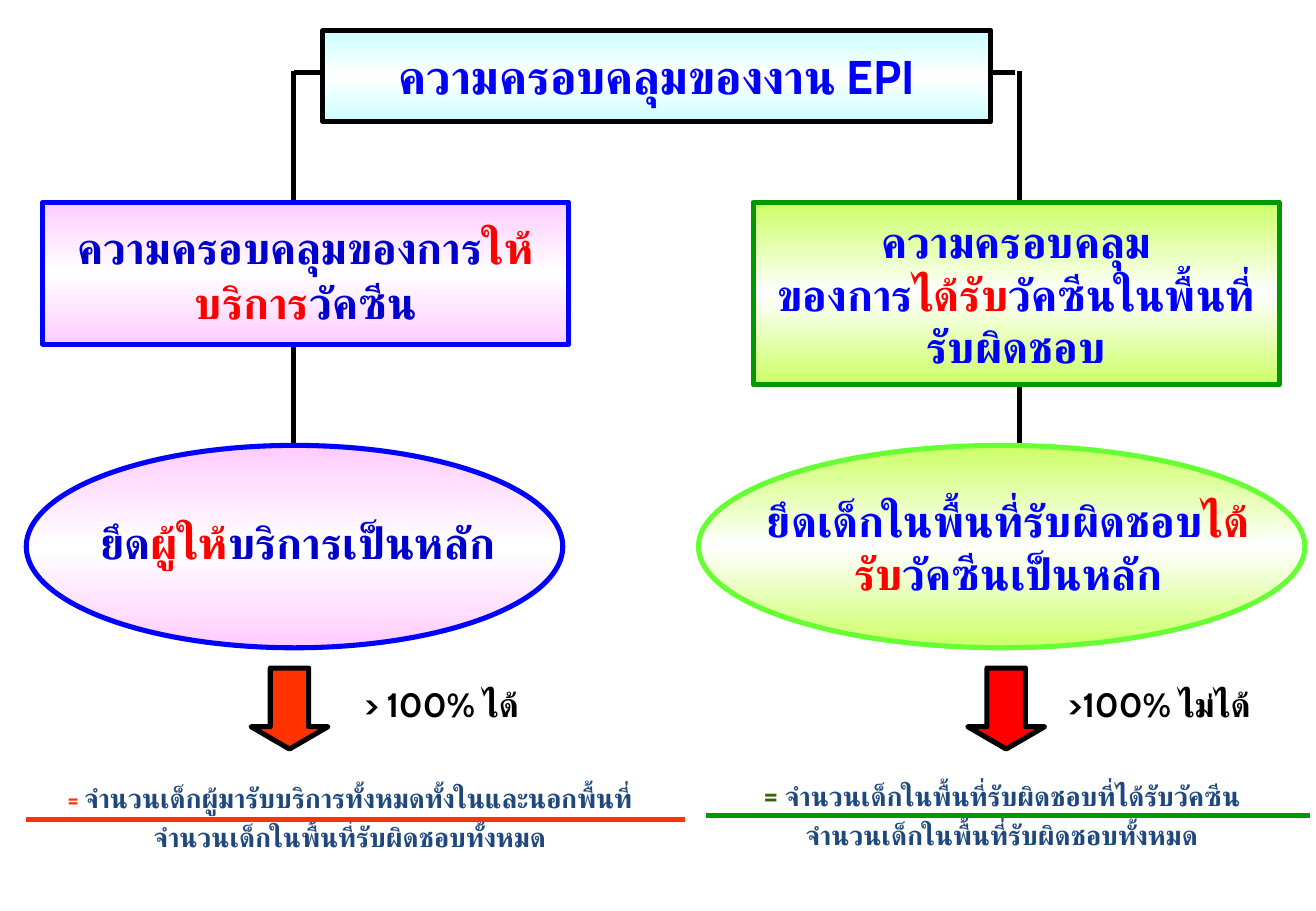
import copy

import pptx
import pptx.dml.color
import pptx.enum.shapes
import pptx.enum.text
import pptx.oxml
import pptx.oxml.ns
import pptx.util

COLS, ROWS = 130, 90
UNIT = 1 / 12  # one grid cell, in inches
SHAPE = pptx.enum.shapes.MSO_SHAPE
C = {
    "black": "000000", "white": "FFFFFF", "red": "FF0000", "blue": "0000FF",
    "navy": "0000CC", "slate": "1F497D", "orange": "FF3300", "olive": "336600",
    "green": "009900", "bright": "66FF33", "lime": "CCFF66", "pink": "FFCCFF",
    "aqua": "CCFFFF",
}


def rgb(name):
    return pptx.dml.color.RGBColor.from_string(C[name])


def cells(n):
    return pptx.util.Inches(n * UNIT)


def place(box, x, y, w, h):
    """Grid position of a part inside a box."""
    return [cells(n) for n in (box[0] + x, box[1] + y, w, h)]


def add_text(sp, paragraphs, size=26, font="Cabin", spacing=1.0, anchor="MIDDLE", wrap=True):
    """Each paragraph is a list of (text, colour) or (text, colour, size)."""
    tf = sp.text_frame
    tf.word_wrap = wrap
    tf.vertical_anchor = pptx.enum.text.MSO_ANCHOR[anchor]
    for i, runs in enumerate(paragraphs):
        p = tf.add_paragraph() if i else tf.paragraphs[0]
        p.alignment = pptx.enum.text.PP_ALIGN.CENTER
        p.line_spacing = spacing
        for text, color, *own_size in runs:
            r = p.add_run()
            r.text = text
            r.font.size = pptx.util.Pt(own_size[0] if own_size else size)
            r.font.bold = True
            r.font.name = font
            r.font.color.rgb = rgb(color)
            # Thai takes the complex-script font
            cs = pptx.oxml.parse_xml(f'<a:cs {pptx.oxml.ns.nsdecls("a")} typeface="{font}"/>')
            r.font._element.append(cs)


def add_shape(s, kind, pos, fill, line, banded=True):
    sp = s.shapes.add_shape(kind, *pos)
    sp.shadow.inherit = False
    sp.line.color.rgb = rgb(line)
    sp.line.width = pptx.util.Pt(3)
    if not banded:
        sp.fill.solid()
        sp.fill.fore_color.rgb = rgb(fill)
        return sp
    # Colour, white, colour from top to bottom
    sp.fill.gradient()
    sp.fill.gradient_angle = 270
    first, middle = sp.fill.gradient_stops
    first.color.rgb, middle.color.rgb = rgb(fill), rgb("white")
    first.position, middle.position = 0, 0.5
    stops = sp._element.spPr.find(".//" + pptx.oxml.ns.qn("a:gsLst"))
    last = copy.deepcopy(stops[0])
    last.set("pos", "100000")
    stops.append(last)
    return sp


def add_line(s, x1, y1, x2, y2, color):
    straight = pptx.enum.shapes.MSO_CONNECTOR.STRAIGHT
    ln = s.shapes.add_connector(straight, *map(cells, (x1, y1, x2, y2)))
    ln.line.color.rgb = rgb(color)
    ln.line.width = pptx.util.Pt(3)
    ln._element.spPr.append(pptx.oxml.parse_xml(f'<a:effectLst {pptx.oxml.ns.nsdecls("a")}/>'))


def add_header(s, box, drops):
    """Crossbar and drops behind the title box."""
    for x in drops:
        add_line(s, x, 7, x, 54, "black")
    add_line(s, drops[0], 7.2, drops[1] - 0.4, 7.2, "black")
    title = add_shape(s, SHAPE.RECTANGLE, place(box, 0, 0, *box[2:]), "aqua", "black")
    add_text(title, [[("ความครอบคลุมของงาน EPI", "blue")]], size=28, wrap=False)


def add_branch(s, box, b):
    """Card, ellipse, arrow with label, and formula, from top to bottom."""
    # Card
    card = add_shape(s, SHAPE.RECTANGLE, place(box, 4.2, 20, 52, b["card_h"]),
                     b["fill"], b["card_line"])
    add_text(card, b["card"], spacing=b["card_spacing"])

    # Ellipse and its wider text
    x, w = b["ellipse"]
    add_shape(s, SHAPE.OVAL, place(box, x, 44, w, 20), b["fill"], b["ellipse_line"])
    basis = s.shapes.add_textbox(*place(box, 3.4, 48, 52, 12))
    add_text(basis, [b["basis"]], font=b["basis_font"], spacing=b["basis_spacing"])

    # Arrow and label
    arrow = add_shape(s, SHAPE.DOWN_ARROW, place(box, b["arrow_x"], 66, 7.6, 8),
                      b["arrow"], "black", banded=False)
    arrow.adjustments[0], arrow.adjustments[1] = 0.5, 0.29
    x, w = b["label_at"]
    label = s.shapes.add_textbox(*place(box, x, 65.8, w, 6.5))
    add_text(label, [[(b["label"], "black")]], size=20, spacing=1.3, anchor="TOP")

    # Formula centred on its fraction bar
    x, y, w = b["bar"]
    formula = s.shapes.add_textbox(*place(box, x - 0.6, y - 6.6, w, 12))
    add_text(formula, [
        [("= ", b["equals"], b["equals_size"]), (b["numerator"], "slate")],
        [("จำนวนเด็กในพื้นที่รับผิดชอบทั้งหมด", "slate")],
    ], size=16, spacing=1.2)
    add_line(s, box[0] + x, box[1] + y, box[0] + x + w, box[1] + y, b["bar_color"])


SERVICE = dict(
    fill="pink", card_line="blue", ellipse_line="blue", card_h=14, card_spacing=1.05,
    card=[[("ความครอบคลุมของการ", "navy"), ("ให้บริการ", "red"), ("วัคซีน", "navy")]],
    ellipse=(2.6, 53), basis_font="Calibri", basis_spacing=0.8,
    basis=[("ยึด", "navy"), ("ผู้ให้", "red"), ("บริการเป็นหลัก", "navy")],
    arrow="orange", arrow_x=24.8, label="> 100% ได้", label_at=(31.3, 24.6),
    bar=(2.6, 81, 65.1), bar_color="orange", equals="orange", equals_size=14,
    numerator="จำนวนเด็กผู้มารับบริการทั้งหมดทั้งในและนอกพื้นที่",
)
AREA = dict(
    fill="lime", card_line="green", ellipse_line="bright", card_h=18, card_spacing=1.0,
    card=[[("ความครอบคลุม", "blue")],
          [("ของการ", "blue"), ("ได้รับ", "red"), ("วัคซีนในพื้นที่รับผิดชอบ", "blue")]],
    ellipse=(-1.2, 59.9), basis_font="Cabin", basis_spacing=1.0,
    basis=[("ยึดเด็กในพื้นที่รับผิดชอบ", "blue"), ("ได้รับ", "red"), ("วัคซีนเป็นหลัก", "blue")],
    arrow="red", arrow_x=25.4, label=">100% ไม่ได้", label_at=(28.9, 30.8),
    bar=(-0.5, 80.6, 59.7), bar_color="green", equals="olive", equals_size=18,
    numerator="จำนวนเด็กในพื้นที่รับผิดชอบที่ได้รับวัคซีน",
)


def main():
    prs = pptx.Presentation()
    prs.slide_width, prs.slide_height = cells(COLS), cells(ROWS)
    s = prs.slides.add_slide(prs.slide_layouts[6])
    add_header(s, (31.9, 3, 66, 9), drops=(29, 100.7))
    add_branch(s, (0, 0), SERVICE)
    add_branch(s, (70.2, 0), AREA)
    prs.save("out.pptx")


if __name__ == "__main__":
    main()
